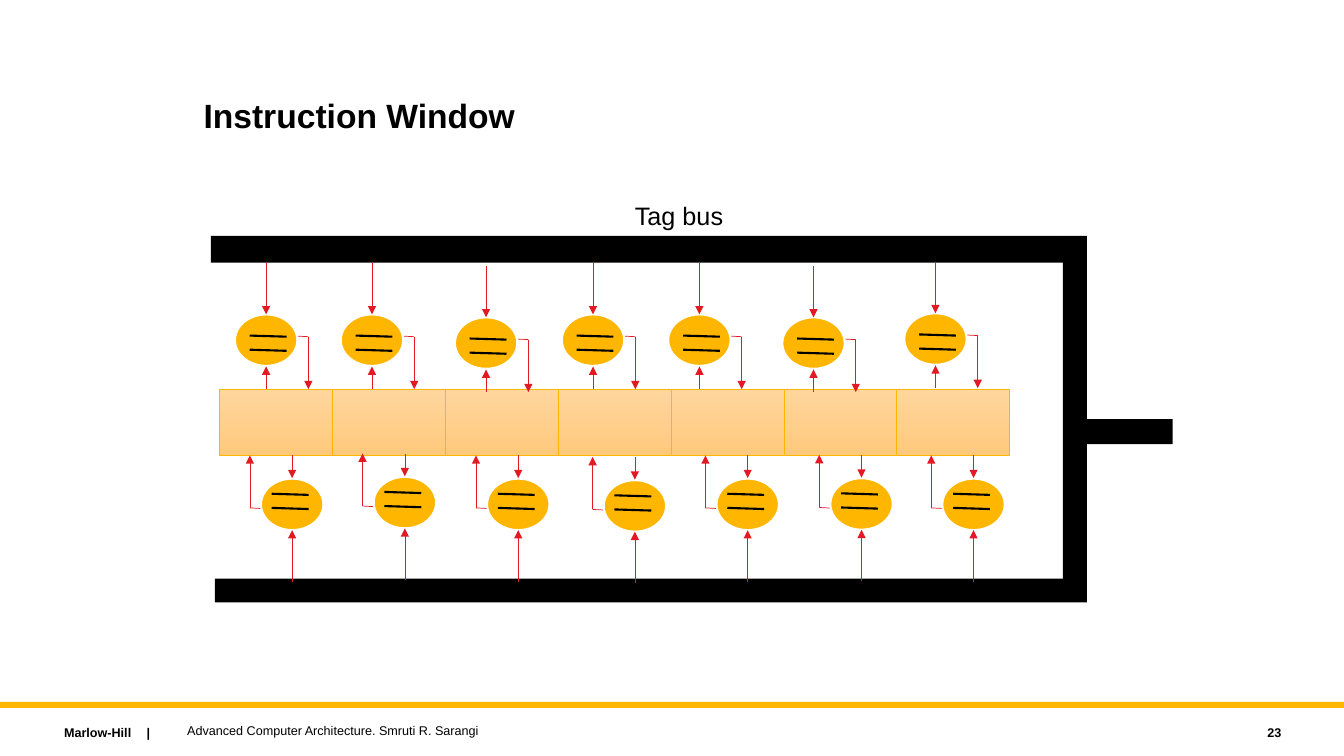
from lxml import etree
from pptx import Presentation
from pptx.dml.color import RGBColor
from pptx.enum.shapes import MSO_CONNECTOR, MSO_SHAPE
from pptx.enum.text import MSO_ANCHOR, MSO_AUTO_SIZE, PP_ALIGN
from pptx.oxml.ns import qn
from pptx.util import Pt

STRAIGHT = MSO_CONNECTOR.STRAIGHT
RECTANGLE, OVAL = MSO_SHAPE.RECTANGLE, MSO_SHAPE.OVAL
TOP, MIDDLE = MSO_ANCHOR.TOP, MSO_ANCHOR.MIDDLE
LEFT, RIGHT = PP_ALIGN.LEFT, PP_ALIGN.RIGHT
FIT_SHAPE = MSO_AUTO_SIZE.SHAPE_TO_FIT_TEXT

BLACK = RGBColor(0x00, 0x00, 0x00)
WHITE = RGBColor(0xFF, 0xFF, 0xFF)
GOLD = RGBColor(0xFF, 0xB6, 0x00)
RED = RGBColor(0xE2, 0x1A, 0x23)
PEACH_TOP = RGBColor(0xFF, 0xD6, 0x9E)
PEACH_BOTTOM = RGBColor(0xFF, 0xC9, 0x7C)

ENTRY_COUNT = 7
ENTRY_LEFT, ENTRY_TOP, ENTRY_WIDTH, ENTRY_HEIGHT = 157, 278, 80.6, 47.4
COMPARATOR_WIDTH, COMPARATOR_HEIGHT = 44.6, 36.8

# Centres of the comparators above and below the window
UPPER = [(190.1, 243), (265.7, 243), (347.2, 245.1), (423.6, 243),
         (499.6, 243), (581.1, 245.1), (668.2, 242.2)]
LOWER = [(208.7, 360.3), (289.2, 359), (370.2, 360.3), (453.5, 361.4),
         (534.1, 360.3), (615.4, 360), (695.4, 360.3)]


class WindowSlide:
    font = "Arial"

    def __init__(self, prs):
        self.slide = prs.slides.add_slide(prs.slide_layouts[5])
        self.shapes = self.slide.shapes

    def add_words(self, paragraph, words, size, bold=False):
        run = paragraph.add_run()
        run.text = words
        run.font.name, run.font.size, run.font.bold = self.font, Pt(size), bold
        run.font.color.rgb = BLACK

    def title(self, words, left, top, width, height):
        title = self.shapes.title
        title.left, title.top = Pt(left), Pt(top)
        title.width, title.height = Pt(width), Pt(height)
        frame = title.text_frame
        frame.vertical_anchor, frame.word_wrap = TOP, True
        paragraph = frame.paragraphs[0]
        paragraph.alignment, paragraph.line_spacing = LEFT, 0.9
        self.add_words(paragraph, words, 24, bold=True)

    def label(self, words, left, top, width, height, size=9, bold=False,
              align=LEFT, anchor=MIDDLE, wrap=True, tab=None):
        box = self.shapes.add_textbox(Pt(left), Pt(top), Pt(width), Pt(height))
        frame = box.text_frame
        frame.word_wrap, frame.vertical_anchor = wrap, anchor
        if not wrap:
            frame.auto_size = FIT_SHAPE
        paragraph = frame.paragraphs[0]
        paragraph.alignment = align
        if tab:
            stops = etree.SubElement(paragraph._p.get_or_add_pPr(), qn("a:tabLst"))
            etree.SubElement(stops, qn("a:tab"), pos=str(Pt(tab)), algn="l")
        self.add_words(paragraph, words, size, bold)

    def bar(self, left, top, width, height, color=BLACK):
        bar = self.shapes.add_shape(RECTANGLE, Pt(left), Pt(top), Pt(width), Pt(height))
        bar.shadow.inherit = False
        bar.fill.solid()
        bar.fill.fore_color.rgb = color
        bar.line.fill.background()

    def entry(self, left):
        entry = self.shapes.add_shape(RECTANGLE, Pt(left), Pt(ENTRY_TOP),
                                      Pt(ENTRY_WIDTH), Pt(ENTRY_HEIGHT))
        entry.shadow.inherit = False
        entry.fill.gradient()
        entry.fill.gradient_angle = 270
        for stop, color in zip(entry.fill.gradient_stops, (PEACH_TOP, PEACH_BOTTOM)):
            stop.color.rgb = color
        entry.line.color.rgb, entry.line.width = GOLD, Pt(0.5)

    def line(self, shapes, start, end, color=RED, weight=0.5, arrow=False):
        line = shapes.add_connector(STRAIGHT, *map(Pt, start + end))
        line.line.color.rgb, line.line.width = color, Pt(weight)
        properties = line._element.spPr
        if arrow:
            etree.SubElement(properties.find(qn("a:ln")), qn("a:tailEnd"), type="triangle")
        etree.SubElement(properties, qn("a:effectLst"))

    def comparator(self, x, y, side):
        """Draw a comparator above the window (side 1) or turned half round below it (-1)."""
        shapes = self.shapes.add_group_shape().shapes

        def at(dx, dy):
            return x + side * dx, y + side * dy

        self.line(shapes, at(30.2, -2.5), at(14.6, -3.3))
        circle = shapes.add_shape(OVAL, Pt(x - COMPARATOR_WIDTH / 2), Pt(y - COMPARATOR_HEIGHT / 2),
                                  Pt(COMPARATOR_WIDTH), Pt(COMPARATOR_HEIGHT))
        circle.shadow.inherit = False
        circle.fill.solid()
        circle.fill.fore_color.rgb = GOLD
        circle.line.color.rgb, circle.line.width = WHITE, Pt(1.5)
        for stroke in (-3.3, 6.8):
            self.line(shapes, at(-11.7, stroke), at(14.6, stroke + 0.8), BLACK, 1.5)
        for start, end in (((0, 35), (0, 18.8)),
                           ((0, -55.2), (0, -18.4)),
                           ((30.2, -2.5), (30.2, 35))):
            self.line(shapes, at(*start), at(*end), arrow=True)


def main():
    prs = Presentation()
    prs.slide_width, prs.slide_height = Pt(960), Pt(540)
    window = WindowSlide(prs)

    window.bar(0, 501.3, 960, 4.4, GOLD)
    window.label("Marlow-Hill\t|", 38.7, 514, 163.4, 18, bold=True, tab=59)
    window.title("Instruction Window", 138.2, 67.7, 620.6, 78.5)

    for i in range(ENTRY_COUNT):
        window.entry(ENTRY_LEFT + i * ENTRY_WIDTH)
    window.bar(150.6, 168.5, 608.6, 19.2)
    for x, y in UPPER:
        window.comparator(x, y, 1)
    window.bar(153.4, 413.3, 605.8, 17)
    for x, y in LOWER:
        window.comparator(x, y, -1)

    window.label("Tag bus", 446.4, 139.7, 78.5, 28.8, size=18, anchor=TOP, wrap=False)
    window.label("23", 821.5, 514, 100.8, 18, bold=True, align=RIGHT)
    window.label("Advanced Computer Architecture. Smruti R. Sarangi", 126.6, 512.6, 576, 18)
    window.bar(759.2, 168.5, 17.2, 261.8)
    window.bar(776.4, 299.3, 61.2, 18)

    prs.save("out.pptx")


if __name__ == "__main__":
    main()
